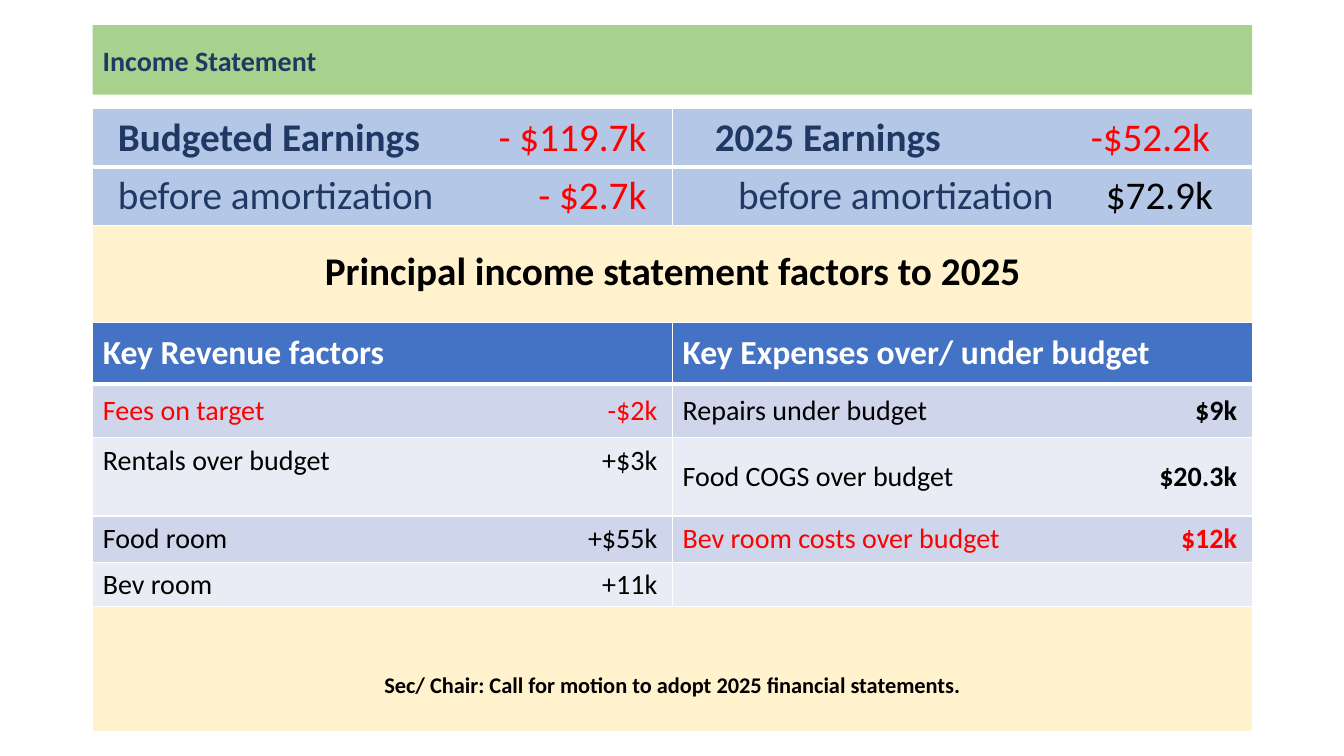
from dataclasses import dataclass

from lxml.etree import SubElement
from pptx import Presentation
from pptx.dml.color import RGBColor
from pptx.enum.shapes import MSO_SHAPE
from pptx.enum.text import MSO_ANCHOR, PP_ALIGN
from pptx.oxml.ns import qn
from pptx.util import Inches, Pt


@dataclass(frozen=True)
class Theme:
    font: str = "Calibri"
    navy: str = "203864"
    red: str = "FF0000"
    black: str = "000000"
    white: str = "FFFFFF"
    green: str = "A9D18E"
    light_blue: str = "B4C7E7"
    cream: str = "FFF2CC"
    blue: str = "4472C4"
    dark_band: str = "CFD5EA"
    light_band: str = "E9EBF5"
    large: int = 28
    heading: int = 24
    body: int = 20
    small: int = 16


theme = Theme()


def write(frame, *parts, size=theme.body, align=PP_ALIGN.LEFT, tab=None):
    """Fill the first paragraph with (text, colour, bold) parts; tab is a right tab stop in inches."""
    para = frame.paragraphs[0]
    para.alignment = align
    if tab:
        stops = SubElement(para._p.get_or_add_pPr(), qn("a:tabLst"))
        SubElement(stops, qn("a:tab"), pos=str(Inches(tab)), algn="r")
    for text, color, bold in parts:
        span = para.add_run()
        span.text = text
        span.font.name = theme.font
        span.font.size = Pt(size)
        span.font.bold = bold
        span.font.color.rgb = RGBColor.from_string(color)


def add_grid(page, top, heights, fills):
    """Add a two-column table with white borders, heavier below its first row."""
    table = page.shapes.add_table(
        len(heights), 2, Inches(left), Inches(top), Inches(width), Inches(sum(heights))
    ).table
    table.first_row = table.horz_banding = False
    for index, (height, fill) in enumerate(zip(heights, fills)):
        table.rows[index].height = Inches(height)
        for cell in table.rows[index].cells:
            cell.vertical_anchor = MSO_ANCHOR.MIDDLE
            properties = cell._tc.get_or_add_tcPr()
            for side in "LRTB":
                heavy = (index, side) in ((0, "B"), (1, "T"))
                line = SubElement(properties, qn(f"a:ln{side}"), w=str(Pt(3 if heavy else 1)))
                solid = SubElement(line, qn("a:solidFill"))
                SubElement(solid, qn("a:srgbClr"), val=theme.white)
            cell.fill.solid()
            cell.fill.fore_color.rgb = RGBColor.from_string(fill)
    return table


deck = Presentation()
deck.slide_width, deck.slide_height = Inches(13.33), Inches(7.5)
page = deck.slides.add_slide(deck.slide_layouts[6])
left, width = 0.92, 11.5

# Title bar
title = page.shapes.add_shape(
    MSO_SHAPE.RECTANGLE, Inches(left), Inches(0.25), Inches(width), Inches(0.69)
)
title.shadow.inherit = False
title.fill.solid()
title.fill.fore_color.rgb = RGBColor.from_string(theme.green)
title.line.fill.background()
title.text_frame.vertical_anchor = MSO_ANCHOR.MIDDLE
write(title.text_frame, ("Income Statement", theme.navy, True))

# Earnings summary and the two cream panels
summary = add_grid(
    page, 1.08, [0.58, 0.58, 2.34, 2.68], [theme.light_blue] * 2 + [theme.cream] * 2
)
# row, column, label, bold label, value, value colour, indent, right edge of value
earnings = [
    (0, 0, "Budgeted Earnings", True, "- $119.7k", theme.red, 0.25, 5.49),
    (0, 1, "2025 Earnings", True, "-$52.2k", theme.red, 0.42, 5.33),
    (1, 0, "before amortization", False, "- $2.7k", theme.red, 0.25, 5.49),
    (1, 1, "before amortization", False, "$72.9k", theme.black, 0.65, 5.36),
]
for row, column, label, bold, value, color, indent, edge in earnings:
    cell = summary.cell(row, column)
    cell.margin_left = Inches(indent)
    write(cell.text_frame, (label + "\t", theme.navy, bold), (value, color, False),
          size=theme.large, tab=edge - indent)

for row in (2, 3):
    summary.cell(row, 0).merge(summary.cell(row, 1))
heading = summary.cell(2, 0)
heading.vertical_anchor = MSO_ANCHOR.TOP
heading.margin_top = Inches(0.22)
write(heading.text_frame, ("Principal income statement factors to 2025", theme.black, True),
      size=theme.large, align=PP_ALIGN.CENTER)
motion = summary.cell(3, 0)
motion.vertical_anchor = MSO_ANCHOR.BOTTOM
motion.margin_bottom = Inches(0.32)
write(motion.text_frame,
      ("Sec/ Chair: Call for motion to adopt 2025 financial statements.", theme.black, True),
      size=theme.small, align=PP_ALIGN.CENTER)

# Revenue and expense factors
factors = add_grid(
    page, 3.2, [0.61, 0.53, 0.78, 0.46, 0.43],
    [theme.blue] + [theme.dark_band, theme.light_band] * 2,
)
for column, label in enumerate(["Key Revenue factors", "Key Expenses over/ under budget"]):
    write(factors.cell(0, column).text_frame, (label, theme.white, True), size=theme.heading)

revenue = [
    ("Fees on target", "-$2k", theme.red),
    ("Rentals over budget", "+$3k", theme.black),
    ("Food room", "+$55k", theme.black),
    ("Bev room", "+11k", theme.black),
]
expenses = [
    ("Repairs under budget", "$9k", theme.black),
    ("Food COGS over budget", "$20.3k", theme.black),
    ("Bev room costs over budget", "$12k", theme.red),
]
for column, entries in enumerate([revenue, expenses]):
    for row, (label, value, color) in enumerate(entries, start=1):
        write(factors.cell(row, column).text_frame, (label + "\t", color, False),
              (value, color, column == 1), tab=5.5)

rentals = factors.cell(2, 0)
rentals.vertical_anchor = MSO_ANCHOR.TOP
rentals.margin_top = Inches(0.06)

deck.save("out.pptx")
